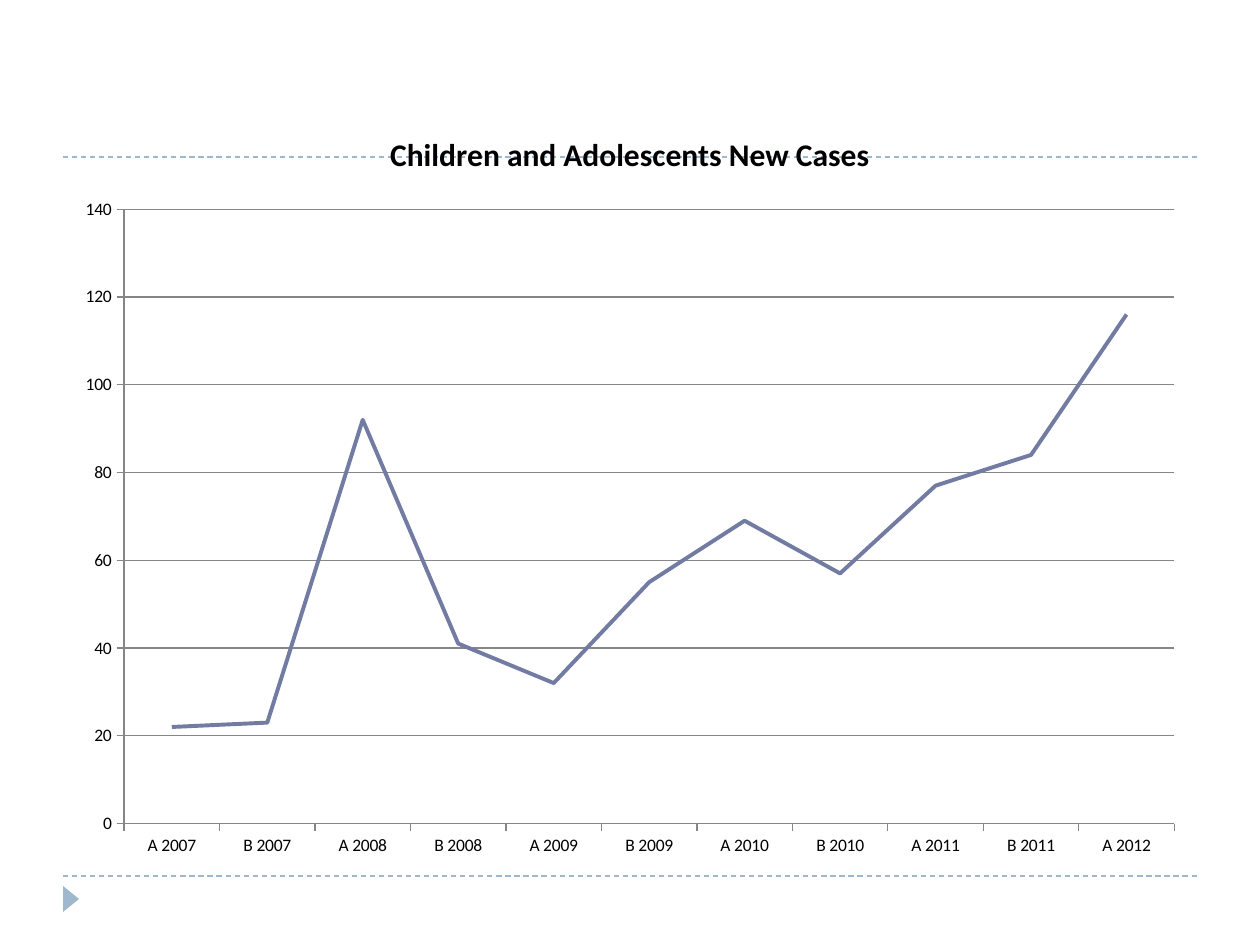
"""Build a slide with a line chart of new cases among children and adolescents."""
from lxml import etree
from pptx import Presentation
from pptx import util as u
from pptx.chart.data import CategoryChartData
from pptx.dml.color import RGBColor
from pptx.enum import chart as ch, dml, shapes
from pptx.oxml.ns import qn

TITLE = "Children and Adolescents New Cases"
CASES = [
    ("Α 2007", 22), ("Β 2007", 23), ("Α 2008", 92), ("Β 2008", 41),
    ("Α 2009", 32), ("Β 2009", 55), ("Α 2010", 69), ("Β 2010", 57),
    ("Α 2011", 77), ("Β 2011", 84), ("Α 2012", 116),
]
FONT, BLACK, GREY, ACCENT, SERIES = "Calibri", "000000", "868686", "9FB8CD", "727CA3"
SLIDE = (1260, 945)
LEFT, RIGHT = 63, 1197
RULES = [876, 157]
ARROW = (58, 891, 26, 16)
CHART = (LEFT, 105, RIGHT - LEFT, 766)


def px(*values):
    return [u.Emu(v * 914400 // 126) for v in values]


def rgb(value):
    return RGBColor.from_string(value)


def set_font(font, size=10, bold=False, color=BLACK):
    font.name, font.size, font.bold = FONT, u.Pt(size), bold
    font.color.rgb = rgb(color)


def set_line(line, color, width, dash=None):
    line.color.rgb = rgb(color)
    line.width = u.Pt(width)
    if dash:
        line.dash_style = dash


def add_text(tf, content, **style):
    r = tf.paragraphs[0].add_run()
    r.text = content
    set_font(r.font, **style)


def add_rule(s, y):
    c = s.shapes.add_connector(shapes.MSO_CONNECTOR.STRAIGHT, *px(LEFT, y, RIGHT, y))
    set_line(c.line, ACCENT, 0.75, dml.MSO_LINE.DASH)
    etree.SubElement(c._element.spPr, qn("a:effectLst"))


def add_arrow(s):
    sp = s.shapes.add_shape(shapes.MSO_SHAPE.ISOSCELES_TRIANGLE, *px(*ARROW))
    sp.rotation = 90
    sp.shadow.inherit = False
    sp.fill.solid()
    sp.fill.fore_color.rgb = rgb(ACCENT)
    sp.line.fill.background()


def add_cases_chart(s):
    data = CategoryChartData()
    data.categories = [name for name, _ in CASES]
    data.add_series(TITLE, [value for _, value in CASES])
    chart = s.shapes.add_chart(ch.XL_CHART_TYPE.LINE, *px(*CHART), data).chart
    set_font(chart.font)
    chart.has_legend = False
    chart.has_title = True
    add_text(chart.chart_title.text_frame, TITLE, size=18, bold=True)
    chart.chart_title.include_in_layout = False

    for axis in (chart.category_axis, chart.value_axis):
        axis.major_tick_mark = ch.XL_TICK_MARK.OUTSIDE
        axis.minor_tick_mark = ch.XL_TICK_MARK.NONE
        set_line(axis.format.line, GREY, 0.75)
    value_axis = chart.value_axis
    value_axis.minimum_scale, value_axis.maximum_scale, value_axis.major_unit = 0, 140, 20
    value_axis.has_major_gridlines = True
    set_line(value_axis.major_gridlines.format.line, GREY, 0.75)

    plot = chart.plots[0]
    plot.vary_by_categories = False
    series = plot.series[0]
    series.smooth = False
    series.marker.style = ch.XL_MARKER_STYLE.NONE
    set_line(series.format.line, SERIES, 2.25)


def main():
    prs = Presentation()
    prs.slide_width, prs.slide_height = px(*SLIDE)
    s = prs.slides.add_slide(prs.slide_layouts[6])
    for y in RULES:
        add_rule(s, y)
    add_arrow(s)
    add_cases_chart(s)
    prs.save("out.pptx")


if __name__ == "__main__":
    main()
